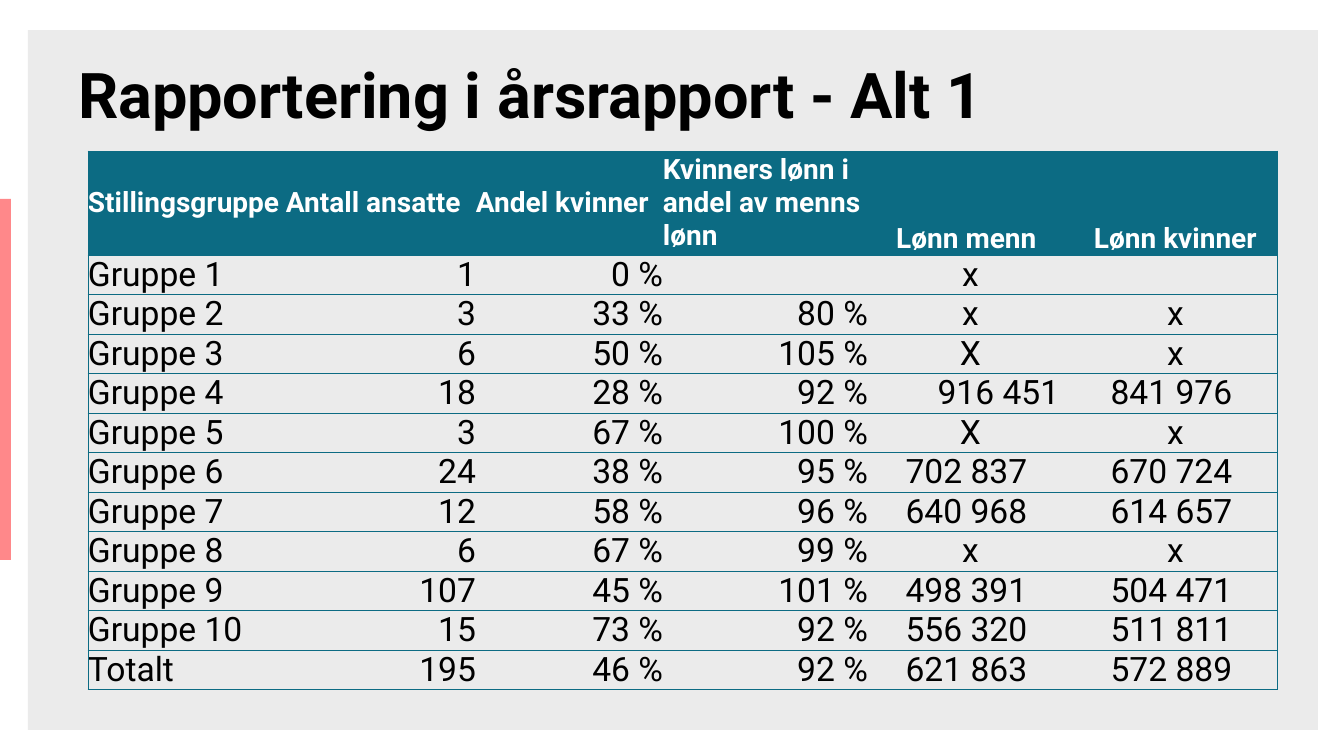
"""Build the slide with the salary report by job group."""
from lxml.etree import SubElement
from pptx import Presentation
from pptx.dml.color import RGBColor
from pptx.enum.shapes import MSO_SHAPE
from pptx.enum.text import MSO_ANCHOR, MSO_AUTO_SIZE, PP_ALIGN
from pptx.oxml.ns import qn
from pptx.util import Pt

PX = 914400 / 100.8
COLOURS = {"panel": "EBEBEB", "accent": "FF888A", "teal": "0C6B83",
           "ink": "000000", "white": "FFFFFF"}


def px(*lengths):
    return [round(length * PX) for length in lengths]


def set_font(paragraph, size, colour, bold):
    font = paragraph.font
    font.name, font.size, font.bold = "Roboto", Pt(size), bold
    font.color.rgb = RGBColor.from_string(COLOURS[colour])


prs = Presentation()
prs.slide_width, prs.slide_height = px(1344, 756)
slide = prs.slides.add_slide(prs.slide_layouts[5])

backdrop = [("panel", (28, 30, 1290, 700)), ("accent", (0, 199, 11, 361))]
for colour, box in backdrop:
    block = slide.shapes.add_shape(MSO_SHAPE.RECTANGLE, *px(*box))
    block.shadow.inherit = False
    block.fill.solid()
    block.fill.fore_color.rgb = RGBColor.from_string(COLOURS[colour])
    block.line.fill.background()
    slide.slide_layout.shapes.element.insert(2, block.element)

title = slide.shapes.title
title.left, title.top, title.width, title.height = px(68, 30, 1210, 126)
title.text_frame.text = "Rapportering i årsrapport - Alt 1"
title.text_frame.word_wrap = True
title.text_frame.auto_size = MSO_AUTO_SIZE.NONE
title.text_frame.vertical_anchor = MSO_ANCHOR.MIDDLE
title.text_frame.paragraphs[0].alignment = PP_ALIGN.LEFT
set_font(title.text_frame.paragraphs[0], 45, "ink", True)

report = [
    ("Stillingsgruppe", "Antall ansatte", "Andel kvinner",
     "Kvinners lønn i andel av menns lønn", "Lønn menn", "Lønn kvinner"),
    ("Gruppe 1", "1", "0 %", "", "x", ""),
    ("Gruppe 2", "3", "33 %", "80 %", "x", "x"),
    ("Gruppe 3", "6", "50 %", "105 %", "X", "x"),
    ("Gruppe 4", "18", "28 %", "92 %", "916 451", "841 976"),
    ("Gruppe 5", "3", "67 %", "100 %", "X", "x"),
    ("Gruppe 6", "24", "38 %", "95 %", "702 837", "670 724"),
    ("Gruppe 7", "12", "58 %", "96 %", "640 968", "614 657"),
    ("Gruppe 8", "6", "67 %", "99 %", "x", "x"),
    ("Gruppe 9", "107", "45 %", "101 %", "498 391", "504 471"),
    ("Gruppe 10", "15", "73 %", "92 %", "556 320", "511 811"),
    ("Totalt", "195", "46 %", "92 %", "621 863", "572 889"),
]
col_widths = px(198, 190, 187, 205, 205, 205)
row_heights = px(104, *[39] * (len(report) - 1))
last_col = len(col_widths) - 1
table = slide.shapes.add_table(len(report), len(col_widths), *px(88, 151),
                               sum(col_widths), sum(row_heights)).table
table.first_row = table.horz_banding = False
for column, width in zip(table.columns, col_widths):
    column.width = width

for r, record in enumerate(report):
    table.rows[r].height = row_heights[r]
    for c, text in enumerate(record):
        cell = table.cell(r, c)
        is_header, is_salary = r == 0, c >= 4
        cell.text = text
        cell.margin_left = cell.margin_right = 0
        cell.margin_top = cell.margin_bottom = 0
        if text == "916 451":
            cell.margin_left = px(56)[0]
        elif is_salary and (text[-1:].isdigit() or text == "Lønn menn"):
            cell.margin_right = px(8)[0]
        cell.vertical_anchor = MSO_ANCHOR.BOTTOM if is_salary else MSO_ANCHOR.MIDDLE

        entry = cell.text_frame.paragraphs[0]
        if is_salary:
            entry.alignment = PP_ALIGN.CENTER
        elif c == 0 or is_header:
            entry.alignment = PP_ALIGN.LEFT
        else:
            entry.alignment = PP_ALIGN.RIGHT
        set_font(entry, 20 if is_header else 24,
                 "white" if is_header else "ink", is_header)

        edges = {"lnL": c == 0, "lnR": c == last_col, "lnT": True, "lnB": True}
        cell_props = cell._tc.get_or_add_tcPr()
        for tag, visible in edges.items():
            edge = SubElement(cell_props, qn(f"a:{tag}"), w=str(Pt(0.75)))
            if visible:
                ink = SubElement(edge, qn("a:solidFill"))
                SubElement(ink, qn("a:srgbClr"), val=COLOURS["teal"])
            else:
                SubElement(edge, qn("a:noFill"))
        if is_header:
            cell.fill.solid()
            cell.fill.fore_color.rgb = RGBColor.from_string(COLOURS["teal"])
        else:
            cell.fill.background()

prs.save("out.pptx")
